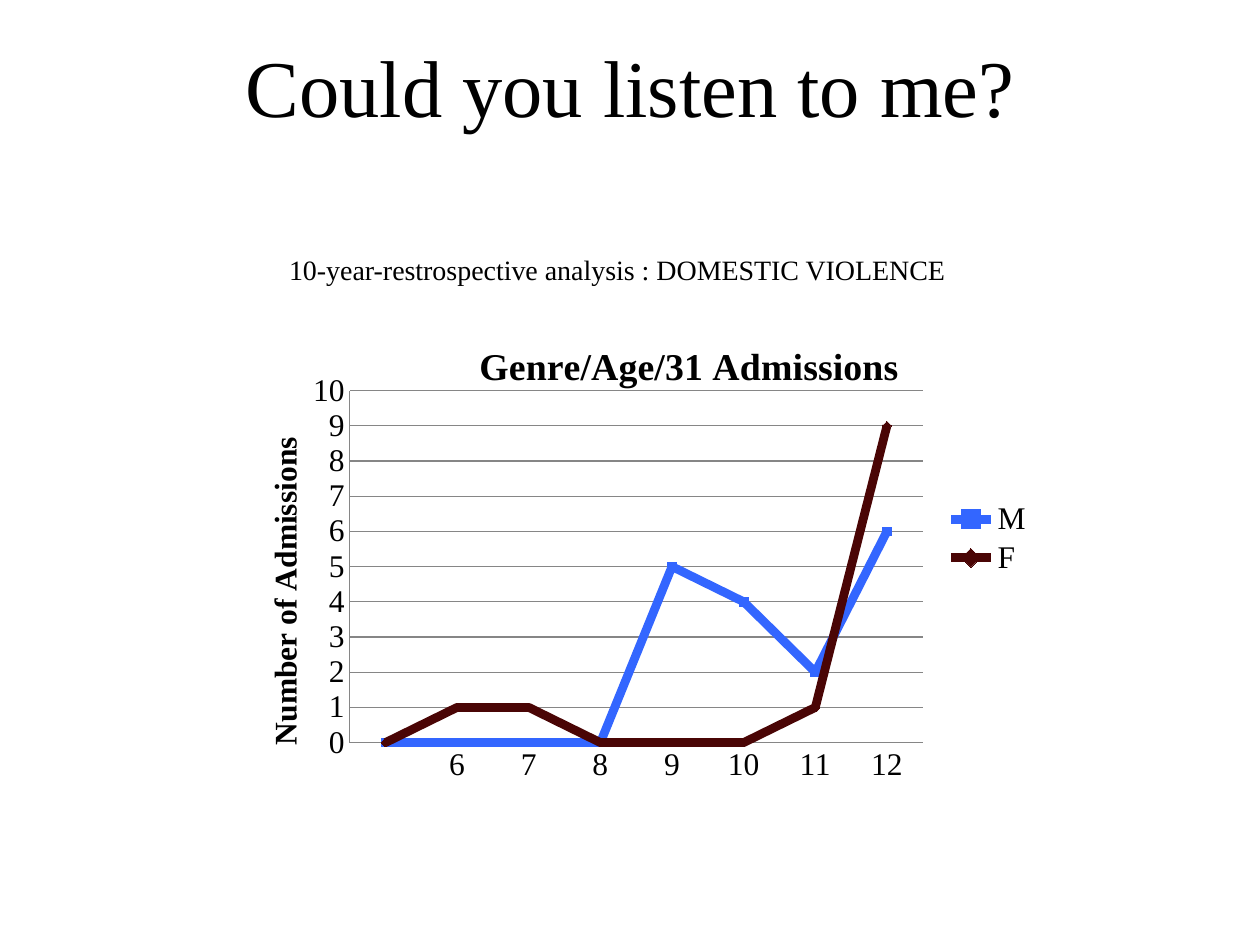
from dataclasses import dataclass

from lxml.etree import SubElement
from pptx import Presentation
from pptx.chart.data import CategoryChartData
from pptx.dml.color import RGBColor
from pptx.enum.chart import XL_CHART_TYPE as ChartType
from pptx.enum.chart import XL_LEGEND_POSITION as LegendPosition
from pptx.enum.chart import XL_MARKER_STYLE as Marker
from pptx.enum.chart import XL_TICK_MARK as TickMark
from pptx.enum.text import MSO_ANCHOR as Anchor
from pptx.enum.text import PP_ALIGN as Align
from pptx.oxml.ns import qn
from pptx.util import Inches, Pt


@dataclass(frozen=True)
class Theme:
    font: str = "Times New Roman"
    ink: str = "000000"
    grid: str = "868686"
    male: str = "3366FF"
    female: str = "4A0505"
    heading: float = 46
    subtitle: float = 16
    chart: float = 18
    chart_title: float = 21.6
    thick: float = 5
    thin: float = 0.75


def colour(code):
    return RGBColor.from_string(code)


def set_layout(parent, after, inner=False, **shares):
    """Fix a chart part at shares of the chart's size, as x, y, w and h."""
    for old in parent.findall(qn("c:layout")):
        parent.remove(old)
    layout = SubElement(parent, qn("c:layout"))
    manual = SubElement(layout, qn("c:manualLayout"))
    settings = {"layoutTarget": "inner"} if inner else {}
    settings |= {"xMode": "edge", "yMode": "edge"} | shares
    for tag, value in settings.items():
        SubElement(manual, qn(f"c:{tag}")).set("val", str(value))
    position = parent.index(parent.find(qn(after))) + 1 if after else 0
    parent.insert(position, layout)


class SlideBuilder:
    def __init__(self, deck, theme):
        self.deck = deck
        self.theme = theme
        self.slide = deck.slides.add_slide(deck.slide_layouts[6])

    def area(self, x, y, w, h):
        """Turn shares of the slide's size into lengths."""
        width, height = self.deck.slide_width, self.deck.slide_height
        return int(x * width), int(y * height), int(w * width), int(h * height)

    def style(self, font, size, bold=False):
        font.name, font.size, font.bold = self.theme.font, Pt(size), bold
        font.color.rgb = colour(self.theme.ink)

    def text(self, words, area, size, below=0):
        """Add centred text, keeping a share of the slide free below it."""
        frame = self.slide.shapes.add_textbox(*self.area(*area)).text_frame
        frame.word_wrap = True
        frame.vertical_anchor = Anchor.MIDDLE
        frame.margin_top = 0
        frame.margin_bottom = int(below * self.deck.slide_height)
        para = frame.paragraphs[0]
        para.text, para.alignment = words, Align.CENTER
        self.style(para.font, size)

    def chart_heading(self, owner, title, words, size, x, y):
        owner.has_title = True
        para = title().text_frame.paragraphs[0]
        para.text = words
        self.style(para.font, size, bold=True)
        set_layout(title()._element, "c:tx", x=x, y=y)

    def stroke(self, line, code, width):
        line.color.rgb, line.width = colour(code), Pt(width)

    def line_chart(self, title, axis_title, ages, series, area):
        """Add a line chart; series maps a name to values, colour and marker."""
        theme = self.theme
        data = CategoryChartData()
        data.categories = ages
        for name, (values, _, _) in series.items():
            data.add_series(name, values)
        chart = self.slide.shapes.add_chart(
            ChartType.LINE_MARKERS, *self.area(*area), data).chart
        self.style(chart.font, theme.chart)

        for plotted, (_, code, marker) in zip(chart.plots[0].series, series.values()):
            plotted.smooth = False
            self.stroke(plotted.format.line, code, theme.thick)
            plotted.marker.style, plotted.marker.size = marker, 5
            plotted.marker.format.fill.solid()
            plotted.marker.format.fill.fore_color.rgb = colour(code)
            self.stroke(plotted.marker.format.line, code, theme.thin)
        chart.plots[0].vary_by_categories = False

        values_axis = chart.value_axis
        values_axis.minimum_scale, values_axis.maximum_scale = 0, 10
        values_axis.major_unit = 1
        values_axis.has_major_gridlines = True
        self.stroke(values_axis.major_gridlines.format.line, theme.grid, theme.thin)
        for axis in (chart.category_axis, values_axis):
            axis.major_tick_mark = axis.minor_tick_mark = TickMark.NONE
            self.stroke(axis.format.line, theme.grid, theme.thin)

        self.chart_heading(chart, lambda: chart.chart_title, title,
                           theme.chart_title, x=0.3, y=0.1)
        self.chart_heading(values_axis, lambda: values_axis.axis_title, axis_title,
                           theme.chart, x=0.04, y=0.29)
        chart.has_legend = True
        chart.legend.position = LegendPosition.RIGHT
        chart.legend.include_in_layout = False
        set_layout(chart.legend._element, "c:legendPos", x=0.87, y=0.42, w=0.12, h=0.16)
        plot_area = chart._chartSpace.find(".//" + qn("c:plotArea"))
        set_layout(plot_area, None, inner=True, x=0.15, y=0.21, w=0.7, h=0.69)


def main():
    deck = Presentation()
    deck.slide_width, deck.slide_height = Inches(10), Inches(7.5)
    theme = Theme()
    page = SlideBuilder(deck, theme)
    page.text("10-year-restrospective analysis : DOMESTIC VIOLENCE",
              (0.09, 0.26, 0.8, 0.05), theme.subtitle)
    page.line_chart(
        "Genre/Age/31 Admissions", "Number of Admissions",
        ["", *map(str, range(6, 13))],
        {"M": ((0, 0, 0, 0, 5, 4, 2, 6), theme.male, Marker.SQUARE),
         "F": ((0, 1, 1, 0, 0, 0, 1, 9), theme.female, Marker.DIAMOND)},
        (0.18, 0.3, 0.65, 0.54))
    page.text("Could you listen to me?", (0.1, 0.07, 0.8, 0.13), theme.heading, below=0.09)
    deck.save("out.pptx")


if __name__ == "__main__":
    main()
